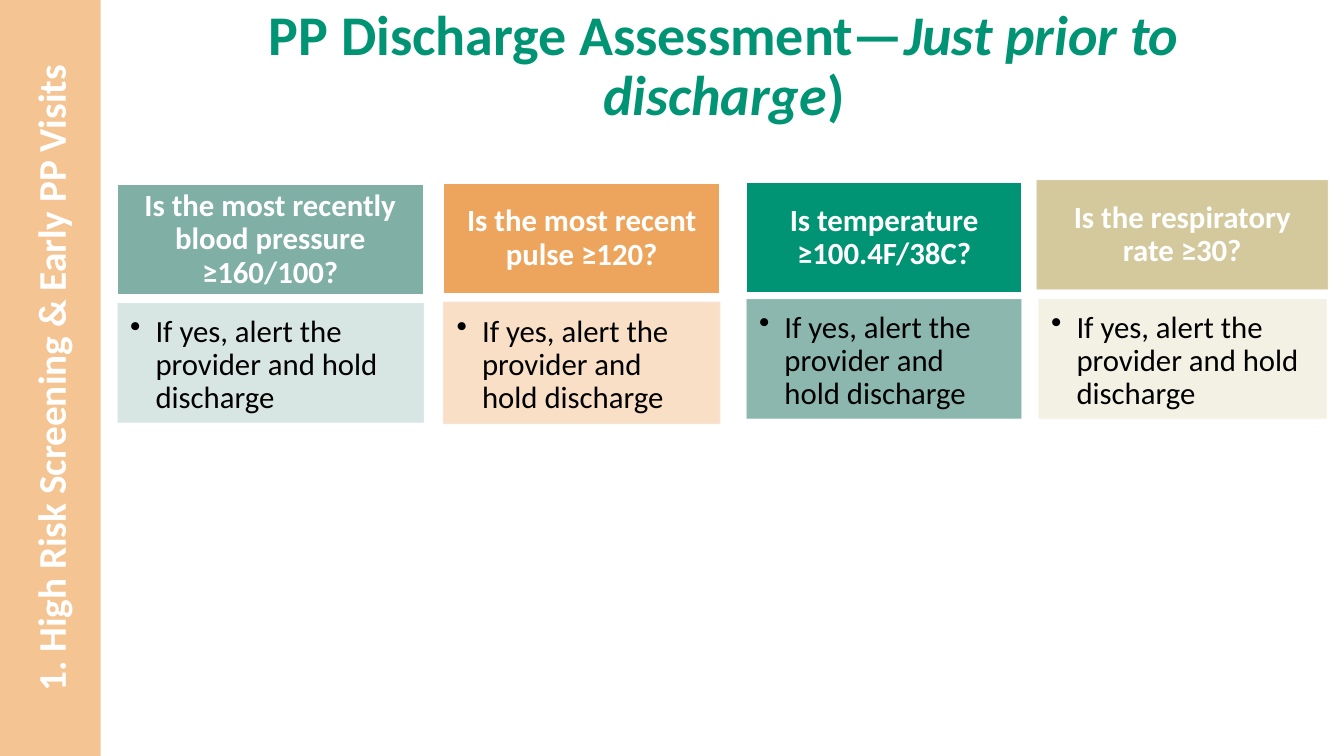
from lxml import etree
from pptx import Presentation
from pptx import util as u
from pptx.dml.color import RGBColor
from pptx.enum import shapes, text
from pptx.oxml.ns import qn

FONT = "Calibri"
WHITE, BLACK, GREEN = "FFFFFF", "000000", "009374"
HEADER_HEIGHT, ADVICE_HEIGHT = 2.79, 3.05
HEADER_INSETS = (0.43, 0.25, 0.43, 0.25)
ADVICE_INSETS = (0.33, 0.33, 0.43, 0.48)
ADVICE = "If yes, alert the provider and hold discharge"

# question, (left, top, width), fill, opacity; advice (left, top, width), fill, line
CHECKS = [
    ("Is the most recently blood pressure ≥160/100?",
     (2.95, 4.65, 7.72), "7FAFA5", 100, (2.95, 7.62, 7.75), "D4E4E1", WHITE),
    ("Is the most recent pulse ≥120?",
     (11.18, 4.62, 6.96), "EDA55D", 100, (11.18, 7.62, 6.96), "F8DCC0", "F8E1D2"),
    ("Is temperature ≥100.4F/38C?",
     (18.8, 4.6, 6.96), GREEN, 100, (18.8, 7.52, 6.96), "80B0A6", WHITE),
    ("Is the respiratory rate ≥30?",
     (26.11, 4.52, 7.37), "CFC493", 90, (26.16, 7.52, 7.29), "F2EFE2", WHITE),
]


def paint(target, color, opacity=100):
    """Give a fill a solid colour, with opacity in percent."""
    target.solid()
    target.fore_color.rgb = RGBColor.from_string(color)
    if opacity < 100:
        solid = target._xPr.find(qn("a:solidFill"))
        etree.SubElement(solid[0], qn("a:alpha"), val=str(opacity * 1000))


def add_box(page, left, top, width, height, fill, line=None, opacity=100):
    box = page.shapes.add_shape(shapes.MSO_SHAPE.RECTANGLE, u.Cm(left), u.Cm(top),
                                u.Cm(width), u.Cm(height))
    box.shadow.inherit = False
    paint(box.fill, fill, opacity)
    if line:
        paint(box.line.fill, line, opacity)
        box.line.width = u.Pt(1)
    else:
        box.line.fill.background()
    return box


def set_frame(box, anchor, insets=(0.25, 0.13, 0.25, 0.13)):
    """Anchor and wrap the text; insets are left, top, right, bottom."""
    frame = box.text_frame
    frame.word_wrap = True
    frame.vertical_anchor = anchor
    (frame.margin_left, frame.margin_top,
     frame.margin_right, frame.margin_bottom) = map(u.Cm, insets)
    return frame.paragraphs[0]


def add_span(para, words, size, color, bold=True, italic=False):
    span = para.add_run()
    span.text = words
    span.font.name = FONT
    span.font.size = u.Pt(size)
    span.font.bold = bold
    span.font.italic = italic
    span.font.color.rgb = RGBColor.from_string(color)


def add_bullet(para):
    props = para._p.get_or_add_pPr()
    props.set("marL", str(u.Cm(0.64)))
    props.set("indent", str(-u.Cm(0.64)))
    etree.SubElement(props, qn("a:buChar"), char="•")


def add_header(page, question, place, fill, opacity):
    box = add_box(page, *place, HEADER_HEIGHT, fill, WHITE, opacity)
    para = set_frame(box, text.MSO_ANCHOR.MIDDLE, HEADER_INSETS)
    para.alignment = text.PP_ALIGN.CENTER
    para.line_spacing = 0.9
    add_span(para, question, 22, WHITE)


def add_advice(page, place, fill, line):
    box = add_box(page, *place, ADVICE_HEIGHT, fill, line, 90)
    para = set_frame(box, text.MSO_ANCHOR.TOP, ADVICE_INSETS)
    add_bullet(para)
    para.alignment = text.PP_ALIGN.LEFT
    para.line_spacing = 0.9
    add_span(para, ADVICE, 22, BLACK, bold=False)


def add_title(page):
    box = page.shapes.add_textbox(u.Cm(3.89), u.Cm(1.57), u.Cm(28.7), u.Cm(1.78))
    para = set_frame(box, text.MSO_ANCHOR.BOTTOM)
    para.alignment = text.PP_ALIGN.CENTER
    para.line_spacing = 0.9
    add_span(para, "PP Discharge Assessment—", 40, GREEN)
    add_span(para, "Just prior to discharge", 40, GREEN, italic=True)
    add_span(para, ")", 40, GREEN)


def add_side_banner(page):
    box = add_box(page, -8.26, 8.26, 19.05, 2.54, "F5C493")
    box.rotation = 270
    para = set_frame(box, text.MSO_ANCHOR.MIDDLE)
    para.alignment = text.PP_ALIGN.CENTER
    add_span(para, "1. High Risk Screening & Early PP Visits", 28, WHITE)


def main():
    deck = Presentation()
    deck.slide_width, deck.slide_height = u.Cm(33.87), u.Cm(19.05)
    page = deck.slides.add_slide(deck.slide_layouts[6])
    for question, header, fill, opacity, advice, advice_fill, line in CHECKS:
        add_header(page, question, header, fill, opacity)
        add_advice(page, advice, advice_fill, line)
    add_title(page)
    add_side_banner(page)
    deck.save("out.pptx")


if __name__ == "__main__":
    main()
